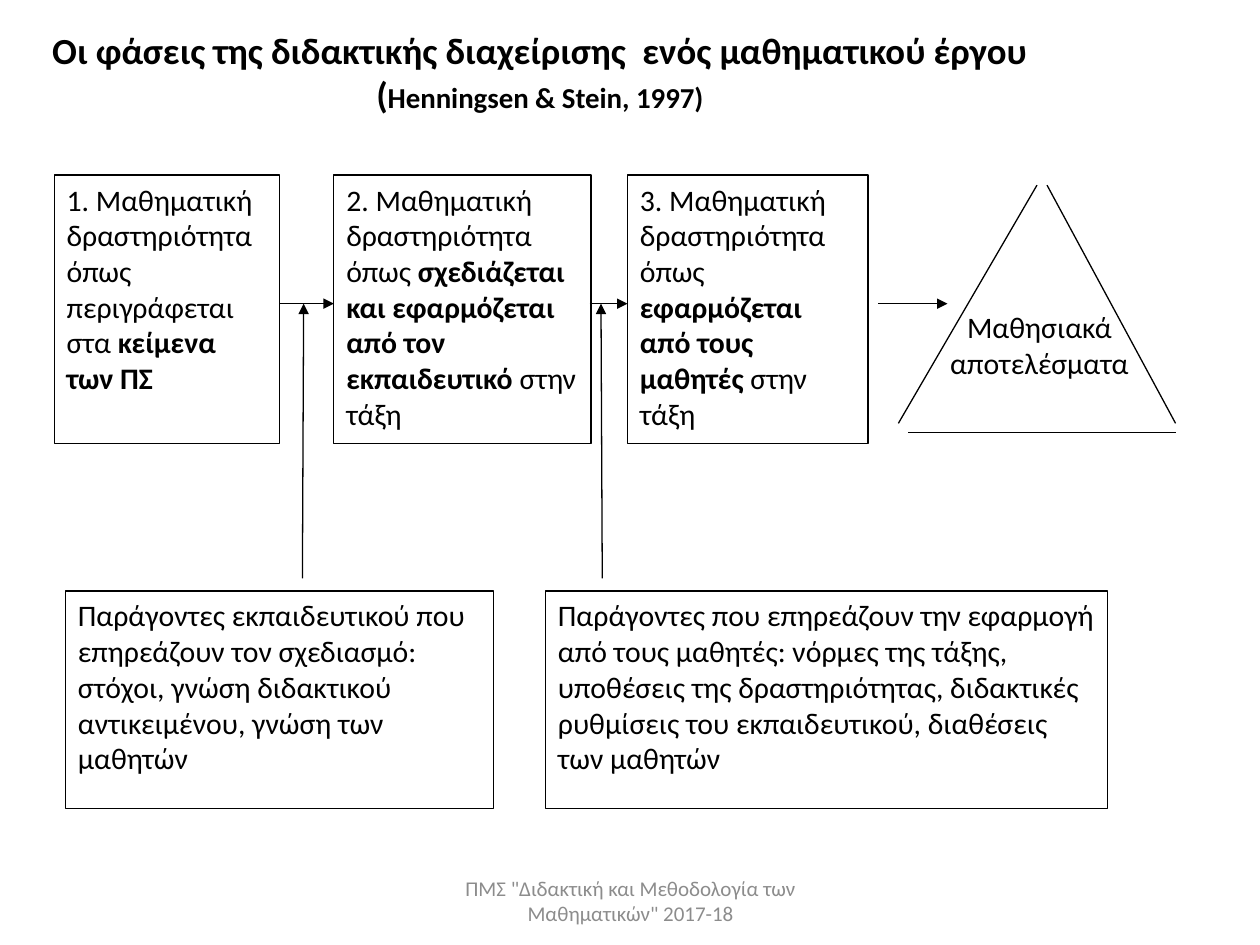
from pptx import Presentation
from pptx import util as u
from pptx.dml.color import RGBColor
from pptx.enum import shapes, text
from pptx.oxml.ns import qn
from lxml import etree

BLACK = RGBColor(0, 0, 0)
WHITE = RGBColor(255, 255, 255)
GREY = RGBColor(0x8C, 0x8C, 0x8C)
MID = text.PP_ALIGN.CENTER


class Deck:
    font = "Calibri"
    size = 17
    width = 0.75

    def __init__(self, slide):
        self.slide = slide

    def put(self, shape, runs, size=None, color=BLACK, align=text.PP_ALIGN.LEFT, after=0):
        """Fill a shape with one paragraph of (words, bold) runs."""
        frame = shape.text_frame
        frame.word_wrap = True
        para = frame.paragraphs[0]
        para.alignment = align
        para.space_after = u.Pt(after)
        for words, bold in runs:
            run = para.add_run()
            run.text = words
            run.font.bold = bold
        para.font.name = self.font
        para.font.size = u.Pt(size or self.size)
        para.font.color.rgb = color
        return para

    def label(self, place, runs, **style):
        shape = self.slide.shapes.add_textbox(*map(u.Inches, place))
        return shape, self.put(shape, runs, align=MID, **style)

    def box(self, place, runs, edge=True, **style):
        shape = self.slide.shapes.add_shape(
            shapes.MSO_SHAPE.RECTANGLE, *map(u.Inches, place))
        shape.shadow.inherit = False
        shape.fill.solid()
        shape.fill.fore_color.rgb = WHITE
        if edge:
            shape.line.color.rgb = BLACK
            shape.line.width = u.Pt(self.width)
        else:
            shape.line.fill.background()
        shape.text_frame.vertical_anchor = text.MSO_ANCHOR.TOP
        self.put(shape, runs, after=10, **style)
        return shape

    def line(self, start, end, arrow=False):
        link = self.slide.shapes.add_connector(
            shapes.MSO_CONNECTOR.STRAIGHT, *map(u.Inches, start + end))
        link.line.color.rgb = BLACK
        link.line.width = u.Pt(self.width)
        props = link._element.spPr
        if arrow:
            tail = etree.SubElement(props.find(qn("a:ln")), qn("a:tailEnd"))
            tail.set("type", "triangle")
        etree.SubElement(props, qn("a:effectLst"))


def main():
    prs = Presentation()
    prs.slide_width, prs.slide_height = u.Inches(10), u.Inches(7.5)
    deck = Deck(prs.slides.add_slide(prs.slide_layouts[6]))

    # Footer
    foot, _ = deck.label(
        (3.42, 6.95, 3.17, 0.4),
        [('ΠΜΣ "Διδακτική και Μεθοδολογία των Μαθηματικών" 2017-18', False)],
        size=12, color=GREY)
    foot.text_frame.vertical_anchor = text.MSO_ANCHOR.MIDDLE

    # Phases
    phases = [
        (0.43, 1.79, [("1. Μαθηματική δραστηριότητα όπως περιγράφεται στα ", False),
                      ("κείμενα των ΠΣ", True)]),
        (2.65, 2.04, [("2. Μαθηματική δραστηριότητα όπως ", False),
                      ("σχεδιάζεται και εφαρμόζεται από τον εκπαιδευτικό ", True),
                      ("στην τάξη", False)]),
        (4.98, 1.91, [("3. Μαθηματική δραστηριότητα όπως ", False),
                      ("εφαρμόζεται από τους μαθητές ", True),
                      ("στην τάξη", False)]),
    ]
    for left, wide, runs in phases:
        deck.box((left, 1.39, wide, 2.13), runs)

    # Learning outcomes, framed by an open triangle
    goal = deck.box((7.1, 1.39, 2.3, 2.35),
                    [("Μαθησιακά αποτελέσματα", False)], edge=False, align=MID)
    goal.text_frame.margin_top = u.Inches(1.06)
    deck.line((8.23, 1.47), (7.13, 3.36))
    deck.line((8.31, 1.47), (9.33, 3.36))
    deck.line((7.21, 3.43), (9.33, 3.43))

    # Factors
    factors = [
        (0.52, 3.4, "Παράγοντες εκπαιδευτικού που επηρεάζουν τον σχεδιασμό: "
                    "στόχοι, γνώση διδακτικού αντικειμένου, γνώση των μαθητών"),
        (4.33, 4.46, "Παράγοντες που επηρεάζουν την εφαρμογή από τους μαθητές: "
                     "νόρμες της τάξης, υποθέσεις της δραστηριότητας, διδακτικές "
                     "ρυθμίσεις του εκπαιδευτικού, διαθέσεις των μαθητών"),
    ]
    for left, wide, words in factors:
        deck.box((left, 4.69, wide, 1.73), [(words, False)])

    # Flow between phases, and the factors acting on it
    flow = 2.41
    for start, end in [(2.22, 2.65), (4.68, 4.98), (6.97, 7.52)]:
        deck.line((start, flow), (end, flow), arrow=True)
    for base, tip in [(2.4, 2.41), (4.78, 4.77)]:
        deck.line((base, 4.59), (tip, flow), arrow=True)

    # Title
    _, para = deck.label(
        (0.15, 0.17, 8.27, 1.42),
        [("Οι φάσεις της διδακτικής διαχείρισης  ενός μαθηματικού έργου", True)],
        size=21)
    para.add_line_break()
    for words, size in [("(", 21), ("Henningsen & Stein, 1997)", 16.5)]:
        run = para.add_run()
        run.text = words
        run.font.bold = True
        run.font.size = u.Pt(size)

    prs.save("out.pptx")


if __name__ == "__main__":
    main()
